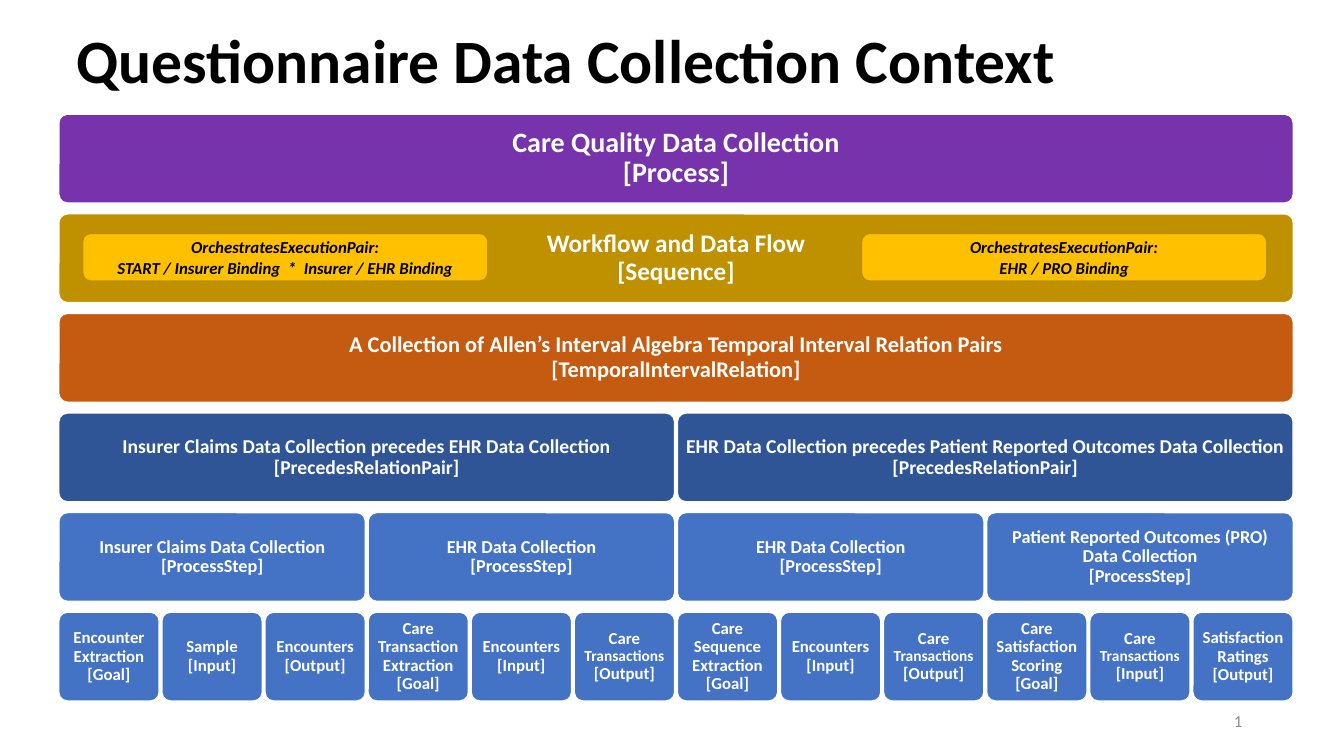
from dataclasses import dataclass

from pptx import Presentation
from pptx.dml.color import RGBColor
from pptx.enum.shapes import MSO_SHAPE
from pptx.enum.text import MSO_ANCHOR, PP_ALIGN
from pptx.shapes.base import BaseShape
from pptx.slide import Slide
from pptx.util import Inches, Pt

FONT = "Calibri"
GRID_LEFT, GRID_TOP = 0.58, 1.13
COLUMN_PITCH, ROW_PITCH = 1.0225, 0.988
COLUMN_GAP, ROW_GAP = 0.02, 0.1
COLUMN_COUNT = 12
SMALL_WORD, SMALL_SIZE = "Transactions", 11


@dataclass(frozen=True)
class TextStyle:
    size: float
    color: str = "FFFFFF"
    bold: bool = True
    italic: bool = False
    align: PP_ALIGN = PP_ALIGN.CENTER
    spacing: float = 0.9
    margin: float = 0.04


@dataclass(frozen=True)
class Box:
    text: str
    column: float
    row: float
    columns: float
    rows: float
    fill: str
    line: str
    line_width: float
    corner: float
    style: TextStyle


@dataclass(frozen=True)
class Level:
    fill: str
    size: float
    labels: tuple[str, ...]


LEVELS = (
    Level("7733AB", 20, ("Care Quality Data Collection\n[Process]",)),
    Level("BF9000", 18, ("Workflow and Data Flow\n[Sequence]",)),
    Level("C55A11", 16, (
        "A Collection of Allen’s Interval Algebra Temporal Interval Relation Pairs\n"
        "[TemporalIntervalRelation]",
    )),
    Level("2F5597", 14, (
        "Insurer Claims Data Collection precedes EHR Data Collection\n[PrecedesRelationPair]",
        "EHR Data Collection precedes Patient Reported Outcomes Data Collection\n"
        "[PrecedesRelationPair]",
    )),
    Level("4472C4", 13, (
        "Insurer Claims Data Collection\n[ProcessStep]",
        "EHR Data Collection\n[ProcessStep]",
        "EHR Data Collection\n[ProcessStep]",
        "Patient Reported Outcomes (PRO)\nData Collection\n[ProcessStep]",
    )),
    Level("4472C4", 12, (
        "Encounter Extraction\n[Goal]",
        "Sample\n[Input]",
        "Encounters\n[Output]",
        "Care Transaction Extraction\n[Goal]",
        "Encounters\n[Input]",
        "Care\nTransactions\n[Output]",
        "Care Sequence Extraction\n[Goal]",
        "Encounters\n[Input]",
        "Care\nTransactions\n[Output]",
        "Care Satisfaction Scoring\n[Goal]",
        "Care\nTransactions\n[Input]",
        "Satisfaction Ratings\n[Output]",
    )),
)

BINDINGS = (
    (0.235, "OrchestratesExecutionPair:\nSTART / Insurer Binding  *  Insurer / EHR Binding"),
    (7.79, "OrchestratesExecutionPair:\nEHR / PRO Binding"),
)


def rgb(value: str) -> RGBColor:
    return RGBColor.from_string(value)


def write_text(shape: BaseShape, text: str, style: TextStyle) -> None:
    frame = shape.text_frame
    frame.word_wrap = True
    frame.vertical_anchor = MSO_ANCHOR.MIDDLE
    frame.margin_left = frame.margin_right = Inches(style.margin)
    frame.margin_top = frame.margin_bottom = Inches(0.05)
    paragraph = frame.paragraphs[0]
    paragraph.alignment = style.align
    paragraph.line_spacing = style.spacing
    font = paragraph.font
    font.name, font.size = FONT, Pt(style.size)
    font.bold, font.italic = style.bold, style.italic
    font.color.rgb = rgb(style.color)
    for index, line in enumerate(text.split("\n")):
        if index:
            paragraph.add_line_break()
        run = paragraph.add_run()
        run.text = line
        if line == SMALL_WORD:
            run.font.size = Pt(SMALL_SIZE)


def draw_box(slide: Slide, box: Box) -> None:
    shape = slide.shapes.add_shape(
        MSO_SHAPE.ROUNDED_RECTANGLE,
        Inches(GRID_LEFT + box.column * COLUMN_PITCH),
        Inches(GRID_TOP + box.row * ROW_PITCH),
        Inches(box.columns * COLUMN_PITCH - COLUMN_GAP),
        Inches(box.rows * ROW_PITCH - ROW_GAP),
    )
    shape.shadow.inherit = False
    shape.adjustments[0] = box.corner
    shape.fill.solid()
    shape.fill.fore_color.rgb = rgb(box.fill)
    shape.line.color.rgb = rgb(box.line)
    shape.line.width = Pt(box.line_width)
    write_text(shape, box.text, box.style)


def draw_level(slide: Slide, row: int, level: Level) -> None:
    span = COLUMN_COUNT / len(level.labels)
    for index, label in enumerate(level.labels):
        draw_box(slide, Box(label, index * span, row, span, 1, level.fill,
                            "FFFFFF", 1.5, 0.1, TextStyle(level.size)))


def draw_label(slide: Slide, text: str, left: float, top: float,
               width: float, height: float, style: TextStyle) -> None:
    label = slide.shapes.add_textbox(Inches(left), Inches(top), Inches(width), Inches(height))
    write_text(label, text, style)


def main() -> None:
    presentation = Presentation()
    presentation.slide_width, presentation.slide_height = Inches(13.33), Inches(7.5)
    slide = presentation.slides.add_slide(presentation.slide_layouts[6])
    draw_label(slide, "Questionnaire Data Collection Context", 0.66, 0.24, 12.18, 0.78,
               TextStyle(44, "000000", align=PP_ALIGN.LEFT, margin=0.1))
    for row, level in enumerate(LEVELS):
        draw_level(slide, row, level)
    binding_style = TextStyle(12, "000000", italic=True, spacing=1.0, margin=0.1)
    for column, text in BINDINGS:
        draw_box(slide, Box(text, column, 1.2, 3.95, 0.58, "FFC000",
                            "BD8E00", 1, 0.17, binding_style))
    draw_label(slide, "1", 9.42, 6.95, 3, 0.4,
               TextStyle(12, "8C8C8C", bold=False, align=PP_ALIGN.RIGHT,
                         spacing=1.0, margin=0.1))
    presentation.save("out.pptx")


if __name__ == "__main__":
    main()
